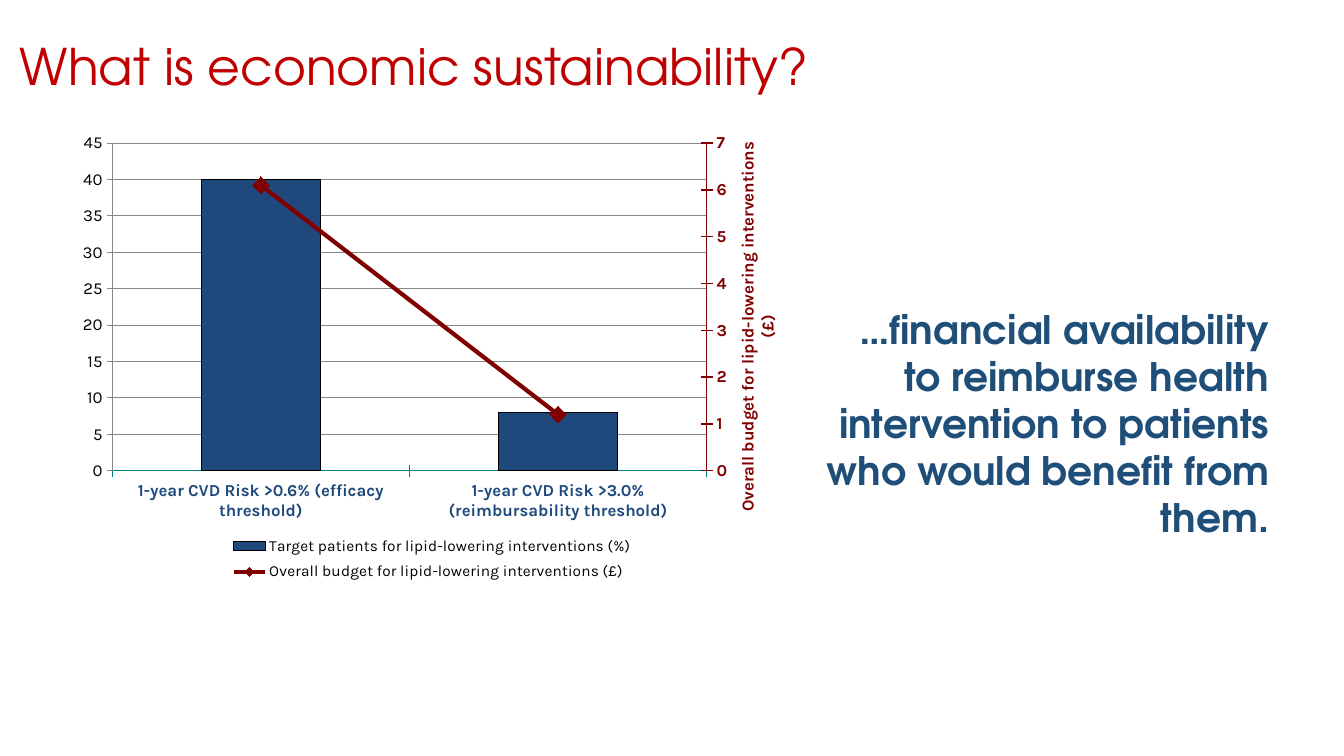
from copy import deepcopy
from dataclasses import dataclass

from lxml import etree
from pptx import Presentation
from pptx.chart.axis import ValueAxis
from pptx.chart.data import CategoryChartData
from pptx.dml.color import RGBColor
from pptx.enum.chart import XL_CHART_TYPE, XL_LEGEND_POSITION, XL_MARKER_STYLE, XL_TICK_MARK
from pptx.enum.text import MSO_AUTO_SIZE, PP_ALIGN
from pptx.oxml import parse_xml
from pptx.oxml.ns import qn
from pptx.util import Cm, Pt

COLUMN = XL_CHART_TYPE.COLUMN_CLUSTERED
CROSS = XL_TICK_MARK.CROSS
RIGHT = XL_LEGEND_POSITION.RIGHT
DIAMOND = XL_MARKER_STYLE.DIAMOND
GROW = MSO_AUTO_SIZE.SHAPE_TO_FIT_TEXT
START, END = PP_ALIGN.LEFT, PP_ALIGN.RIGHT

HEAD, BODY = "TeX Gyre Adventor", "Karla"
NAVY, TEAL, MAROON, BLACK = "1F497D", "008080", "800000", "000000"
CHART_NS = "http://schemas.openxmlformats.org/drawingml/2006/chart"
TARGET = "Target patients for lipid-lowering interventions (%)"
BUDGET = "Overall budget for lipid-lowering interventions (£)"


@dataclass
class Label:
    text: str
    box: tuple[float, float, float, float]
    size: int
    color: str
    bold: bool
    align: PP_ALIGN


@dataclass
class Scale:
    title: str
    top: int
    step: int
    color: str
    line: str


LABELS = [
    Label("What is economic sustainability?", (0.25, 0.76, 33.3, 1.8),
          36, "C00000", False, START),
    Label("…financial availability to reimburse health intervention "
          "to patients who would benefit from them.",
          (20.57, 7.57, 11.66, 6.25), 28, "1F4E79", True, END),
]
LEFT_SCALE = Scale(TARGET, 45, 5, NAVY, TEAL)
RIGHT_SCALE = Scale(BUDGET, 7, 1, MAROON, MAROON)


def rgb(color: str) -> RGBColor:
    return RGBColor.from_string(color)


def set_font(font, name: str, size: int, color: str, bold: bool) -> None:
    font.name = name
    font.size = Pt(size)
    font.bold = bold
    font.color.rgb = rgb(color)


def set_line(line, color: str, width: float) -> None:
    line.color.rgb = rgb(color)
    line.width = Pt(width)


def add_label(slide, label: Label) -> None:
    frame = slide.shapes.add_textbox(*map(Cm, label.box)).text_frame
    frame.word_wrap = True
    frame.auto_size = GROW
    para = frame.paragraphs[0]
    para.text = label.text
    para.alignment = label.align
    set_font(para.font, HEAD, label.size, label.color, label.bold)


def style_axis(axis, color: str, line: str) -> None:
    axis.has_major_gridlines = False
    axis.major_tick_mark = CROSS
    set_font(axis.tick_labels.font, BODY, 12, color, True)
    set_line(axis.format.line, line, 1)


def style_scale(axis: ValueAxis, scale: Scale) -> None:
    style_axis(axis, scale.color, scale.line)
    axis.minimum_scale = 0
    axis.maximum_scale = scale.top
    axis.major_unit = scale.step
    para = axis.axis_title.text_frame.paragraphs[0]
    para.text = scale.title
    set_font(para.font, BODY, 12, scale.color, True)


def put(parent, tag: str, value: str) -> None:
    node = parent.find(qn(tag))
    if node is None:
        node = etree.SubElement(parent, qn(tag))
    node.set("val", value)


def purge(parent, tag: str) -> None:
    for node in parent.findall(qn(tag)):
        parent.remove(node)


def place(parent, index: int, inner: bool, *spots: float) -> None:
    purge(parent, "c:layout")
    layout = parse_xml(f'<c:layout xmlns:c="{CHART_NS}"><c:manualLayout/></c:layout>')
    if inner:
        put(layout[0], "c:layoutTarget", "inner")
    for side in "xy":
        put(layout[0], f"c:{side}Mode", "edge")
    for side, spot in zip("xywh", spots):
        put(layout[0], f"c:{side}", str(spot))
    parent.insert(index, layout)


def split_line(chart) -> ValueAxis:
    bars = chart.plots[0]._element
    area = bars.getparent()
    row = bars.findall(qn("c:ser"))[1]
    purge(row, "c:invertIfNegative")
    plot = parse_xml(
        f'<c:lineChart xmlns:c="{CHART_NS}"><c:grouping val="standard"/>'
        '<c:varyColors val="0"/><c:marker val="1"/>'
        '<c:axId val="5001"/><c:axId val="5002"/></c:lineChart>')
    plot.insert(2, row)
    bars.addnext(plot)
    first = area.find(qn("c:valAx"))
    put(first, "c:crossBetween", "between")
    cats = deepcopy(area.find(qn("c:catAx")))
    vals = deepcopy(first)
    for axis, own, other in ((cats, "5001", "5002"), (vals, "5002", "5001")):
        put(axis, "c:axId", own)
        put(axis, "c:crossAx", other)
    put(cats, "c:delete", "1")
    put(vals, "c:axPos", "r")
    put(vals, "c:crosses", "max")
    first.addnext(vals)
    vals.addnext(cats)
    return ValueAxis(vals)


def add_graph(slide) -> None:
    data = CategoryChartData()
    data.categories = ["1-year CVD Risk >0.6% (efficacy threshold)",
                       "1-year CVD Risk >3.0% (reimbursability threshold)"]
    data.add_series(TARGET, (40, 8))
    data.add_series(BUDGET, (6.1, 1.2))
    box = map(Cm, (0.53, 2.87, 19.2, 12.32))
    chart = slide.shapes.add_chart(COLUMN, *box, data).chart
    chart.has_title = False
    set_font(chart.font, BODY, 12, BLACK, False)

    second = split_line(chart)
    style_axis(chart.category_axis, NAVY, TEAL)
    style_scale(chart.value_axis, LEFT_SCALE)
    style_scale(second, RIGHT_SCALE)

    bars, trend = chart.plots
    bars.gap_width = 150
    bars.vary_by_categories = False
    bar = bars.series[0]
    bar.format.fill.solid()
    bar.format.fill.fore_color.rgb = rgb(NAVY)
    set_line(bar.format.line, BLACK, 1)

    line = trend.series[0]
    line.smooth = False
    set_line(line.format.line, MAROON, 3)
    line.marker.style = DIAMOND
    line.marker.size = 12
    line.marker.format.fill.solid()
    line.marker.format.fill.fore_color.rgb = rgb(MAROON)
    set_line(line.marker.format.line, MAROON, 1)

    chart.has_legend = True
    legend = chart.legend
    legend.position = RIGHT
    legend.include_in_layout = False
    set_font(legend.font, BODY, 11, BLACK, False)
    place(legend._element, 1, False, 0.26, 0.85, 0.56, 0.12)
    place(bars._element.getparent(), 0, True, 0.12, 0.06, 0.78, 0.67)


def main() -> None:
    deck = Presentation()
    deck.slide_width, deck.slide_height = Cm(33.87), Cm(19.05)
    slide = deck.slides.add_slide(deck.slide_layouts[6])
    for label in LABELS:
        add_label(slide, label)
    add_graph(slide)
    deck.save("out.pptx")


if __name__ == "__main__":
    main()
